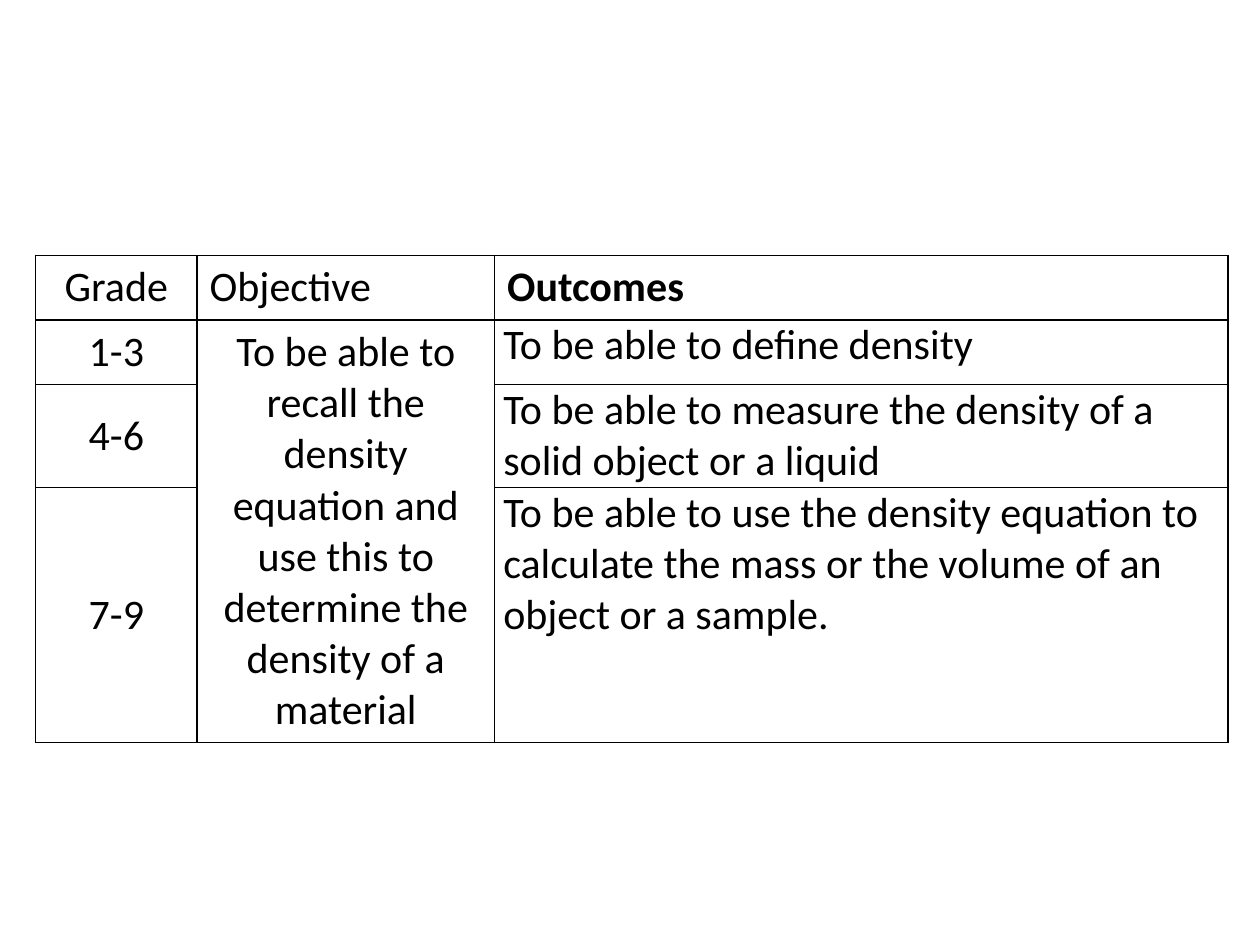
from lxml import etree
from pptx import Presentation
from pptx.dml.color import RGBColor
from pptx.enum.text import MSO_ANCHOR, PP_ALIGN
from pptx.oxml.ns import qn
from pptx.util import Pt

LEFT, CENTER = PP_ALIGN.LEFT, PP_ALIGN.CENTER
TOP, MIDDLE = MSO_ANCHOR.TOP, MSO_ANCHOR.MIDDLE
BLACK, WHITE = "000000", "FFFFFF"
BLANK_LAYOUT = 6

COLUMN_WIDTHS = [92.2, 170, 419]
ROW_HEIGHTS = [36.9, 36.9, 58.7, 145.7]
HEADINGS = ["Grade", "Objective", "Outcomes"]
OBJECTIVE = ("To be able to recall the density equation and use this "
             "to determine the density of a material")
OUTCOMES = [
    ("1-3", "To be able to define density"),
    ("4-6", "To be able to measure the density of a solid object or a liquid"),
    ("7-9", "To be able to use the density equation to calculate the mass "
            "or the volume of an object or a sample."),
]


def color(value):
    """Turn a hex string into a colour."""
    return RGBColor.from_string(value)


def set_attributes(target, values):
    """Set every named value on the target."""
    for name, value in values.items():
        setattr(target, name, value)


def add_borders(cell):
    """Draw a one-point black line on each side of a cell."""
    properties = cell._tc.get_or_add_tcPr()
    for index, side in enumerate(("lnL", "lnR", "lnT", "lnB")):
        line = etree.Element(qn(f"a:{side}"), w=str(Pt(1)))
        fill = etree.SubElement(line, qn("a:solidFill"))
        etree.SubElement(fill, qn("a:srgbClr"), val=BLACK)
        properties.insert(index, line)


def format_cell(cell):
    """Give a cell its white fill and black borders."""
    cell.fill.solid()
    cell.fill.fore_color.rgb = color(WHITE)
    add_borders(cell)


def write_cell(cell, text, align=LEFT, anchor=TOP, bold=False, inset=(7.2, 3.6)):
    """Write one paragraph into a cell with its alignment and insets."""
    side, edge = map(Pt, inset)
    set_attributes(cell, {
        "vertical_anchor": anchor,
        "margin_left": side, "margin_right": side,
        "margin_top": edge, "margin_bottom": edge,
    })
    para = cell.text_frame.paragraphs[0]
    para.alignment = align
    span = para.add_run()
    span.text = text
    set_attributes(span.font, {"name": "Calibri", "size": Pt(24), "bold": bold})
    span.font.color.rgb = color(BLACK)


def add_outcomes_table(page, left, top, width, height):
    """Place the table of grades, objective and outcomes in the given box."""
    frame = page.shapes.add_table(
        len(ROW_HEIGHTS), len(COLUMN_WIDTHS),
        Pt(left), Pt(top), Pt(width), Pt(height))
    table = frame.table
    set_attributes(table, {"first_row": False, "horz_banding": False})
    for column, share in zip(table.columns, COLUMN_WIDTHS):
        column.width = Pt(width * share / sum(COLUMN_WIDTHS))
    for row, share in zip(table.rows, ROW_HEIGHTS):
        row.height = Pt(height * share / sum(ROW_HEIGHTS))
    for cell in table.iter_cells():
        format_cell(cell)

    for index, heading in enumerate(HEADINGS):
        write_cell(table.cell(0, index), heading,
                   align=CENTER if heading == "Grade" else LEFT,
                   bold=heading == "Outcomes")
    table.cell(1, 1).merge(table.cell(len(OUTCOMES), 1))
    write_cell(table.cell(1, 1), OBJECTIVE, CENTER, MIDDLE)
    for index, (grade, outcome) in enumerate(OUTCOMES, start=1):
        write_cell(table.cell(index, 0), grade, CENTER, MIDDLE)
        write_cell(table.cell(index, 2), outcome, inset=(5, 0))


def main():
    """Build and save the deck."""
    deck = Presentation()
    set_attributes(deck, {"slide_width": Pt(720), "slide_height": Pt(540)})
    page = deck.slides.add_slide(deck.slide_layouts[BLANK_LAYOUT])
    add_outcomes_table(page, 20.4, 146, sum(COLUMN_WIDTHS), sum(ROW_HEIGHTS))
    deck.save("out.pptx")


if __name__ == "__main__":
    main()
